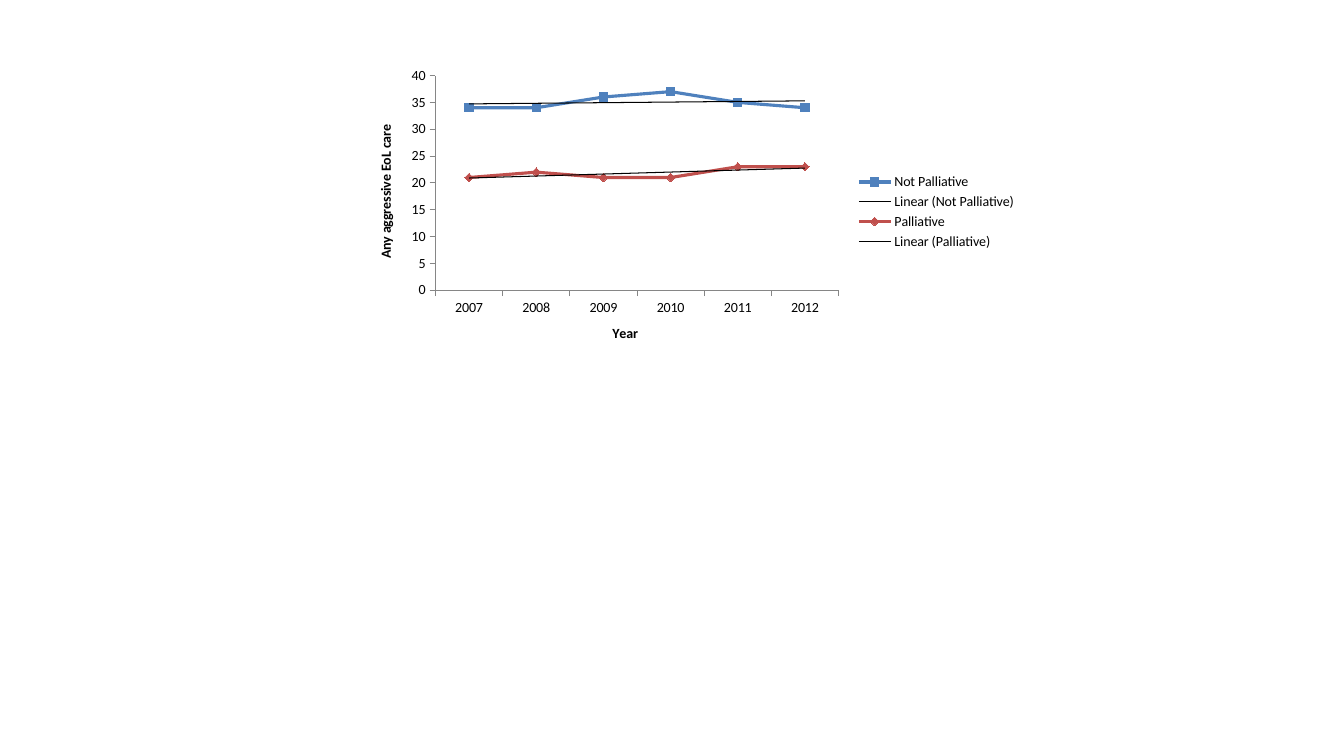
from dataclasses import dataclass

from pptx import Presentation
from pptx.chart.axis import CategoryAxis, ValueAxis
from pptx.chart.chart import Chart
from pptx.chart.data import CategoryChartData
from pptx.chart.series import LineSeries
from pptx.dml.color import RGBColor
from pptx.enum.chart import XL_CHART_TYPE, XL_LEGEND_POSITION, XL_MARKER_STYLE, XL_TICK_MARK
from pptx.oxml import parse_xml
from pptx.oxml.ns import nsdecls, qn
from pptx.util import Inches, Pt

LINE_MARKERS = XL_CHART_TYPE.LINE_MARKERS
LEGEND_RIGHT = XL_LEGEND_POSITION.RIGHT
SQUARE, DIAMOND = XL_MARKER_STYLE.SQUARE, XL_MARKER_STYLE.DIAMOND
OUTSIDE = XL_TICK_MARK.OUTSIDE

BLACK = RGBColor(0x00, 0x00, 0x00)
GRAY = RGBColor(0x86, 0x86, 0x86)
BLUE = RGBColor(0x4F, 0x81, 0xBD)
RED = RGBColor(0xC0, 0x50, 0x4D)

FONT = "Calibri"
TEXT_SIZE = Pt(10)
BLANK_LAYOUT = 6
YEARS = [str(year) for year in range(2007, 2013)]


@dataclass(frozen=True)
class Box:
    """A rectangle given as shares of whatever holds it."""
    x: float
    y: float
    w: float
    h: float


@dataclass(frozen=True)
class CareGroup:
    name: str
    values: tuple[int, ...]
    color: RGBColor
    marker: XL_MARKER_STYLE


CHART_BOX = Box(0.264, 0.08, 0.5, 0.4)
PLOT_BOX = Box(0.12, 0.05, 0.6, 0.71)
GROUPS = (
    CareGroup("Not Palliative", (34, 34, 36, 37, 35, 34), BLUE, SQUARE),
    CareGroup("Palliative", (21, 22, 21, 21, 23, 23), RED, DIAMOND),
)


def style_axis(axis: CategoryAxis | ValueAxis, title: str) -> None:
    axis.has_major_gridlines = False
    axis.major_tick_mark = OUTSIDE
    axis.format.line.color.rgb = GRAY
    axis.format.line.width = Pt(0.75)
    tf = axis.axis_title.text_frame
    tf.text = title
    font = tf.paragraphs[0].runs[0].font
    font.name, font.size, font.bold = FONT, TEXT_SIZE, True
    font.color.rgb = BLACK


def style_series(series: LineSeries, group: CareGroup) -> None:
    series.smooth = False
    series.format.line.color.rgb = group.color
    series.format.line.width = Pt(2.25)
    marker = series.marker
    marker.style, marker.size = group.marker, 6
    marker.format.fill.solid()
    marker.format.fill.fore_color.rgb = group.color
    marker.format.line.color.rgb = group.color


def add_trendlines(chart: Chart) -> None:
    for categories in chart.element.findall(f'.//{qn("c:ser")}/{qn("c:cat")}'):
        categories.addprevious(parse_xml(
            f'<c:trendline {nsdecls("c", "a")}>'
            f'<c:spPr><a:ln w="{int(Pt(0.75))}"><a:solidFill><a:srgbClr val="{BLACK}"/>'
            '</a:solidFill></a:ln></c:spPr>'
            '<c:trendlineType val="linear"/><c:dispRSqr val="0"/><c:dispEq val="0"/>'
            '</c:trendline>'))


def place_plot(chart: Chart, box: Box) -> None:
    """Fix the inner plot area inside the chart."""
    plot_area = chart.element.find(f'.//{qn("c:plotArea")}')
    for layout in plot_area.findall(qn("c:layout")):
        plot_area.remove(layout)
    plot_area.insert(0, parse_xml(
        f'<c:layout {nsdecls("c")}><c:manualLayout><c:layoutTarget val="inner"/>'
        '<c:xMode val="edge"/><c:yMode val="edge"/>'
        f'<c:x val="{box.x}"/><c:y val="{box.y}"/>'
        f'<c:w val="{box.w}"/><c:h val="{box.h}"/></c:manualLayout></c:layout>'))


def add_legend(chart: Chart) -> None:
    """Show the legend, with the trend entries marked as left out."""
    chart.has_legend = True
    chart.legend.position = LEGEND_RIGHT
    chart.legend.include_in_layout = False
    position = chart.element.find(f'.//{qn("c:legendPos")}')
    for idx in reversed(range(len(GROUPS), 2 * len(GROUPS))):
        position.addnext(parse_xml(
            f'<c:legendEntry {nsdecls("c")}><c:idx val="{idx}"/>'
            '<c:delete val="1"/></c:legendEntry>'))


def main() -> None:
    prs = Presentation()
    prs.slide_width, prs.slide_height = Inches(13.33), Inches(7.5)
    s = prs.slides.add_slide(prs.slide_layouts[BLANK_LAYOUT])

    data = CategoryChartData()
    data.categories = YEARS
    for group in GROUPS:
        data.add_series(group.name, group.values)
    width, height = prs.slide_width, prs.slide_height
    chart = s.shapes.add_chart(
        LINE_MARKERS, int(CHART_BOX.x * width), int(CHART_BOX.y * height),
        int(CHART_BOX.w * width), int(CHART_BOX.h * height), data).chart

    chart.has_title = False
    chart.font.name, chart.font.size = FONT, TEXT_SIZE
    chart.font.color.rgb = BLACK
    chart.plots[0].vary_by_categories = False
    style_axis(chart.category_axis, "Year")
    style_axis(chart.value_axis, "Any aggressive EoL care")
    chart.value_axis.minimum_scale = 0
    chart.value_axis.maximum_scale = 40
    chart.value_axis.major_unit = 5
    for series, group in zip(chart.plots[0].series, GROUPS):
        style_series(series, group)
    add_trendlines(chart)
    place_plot(chart, PLOT_BOX)
    add_legend(chart)

    prs.save("out.pptx")


if __name__ == "__main__":
    main()
